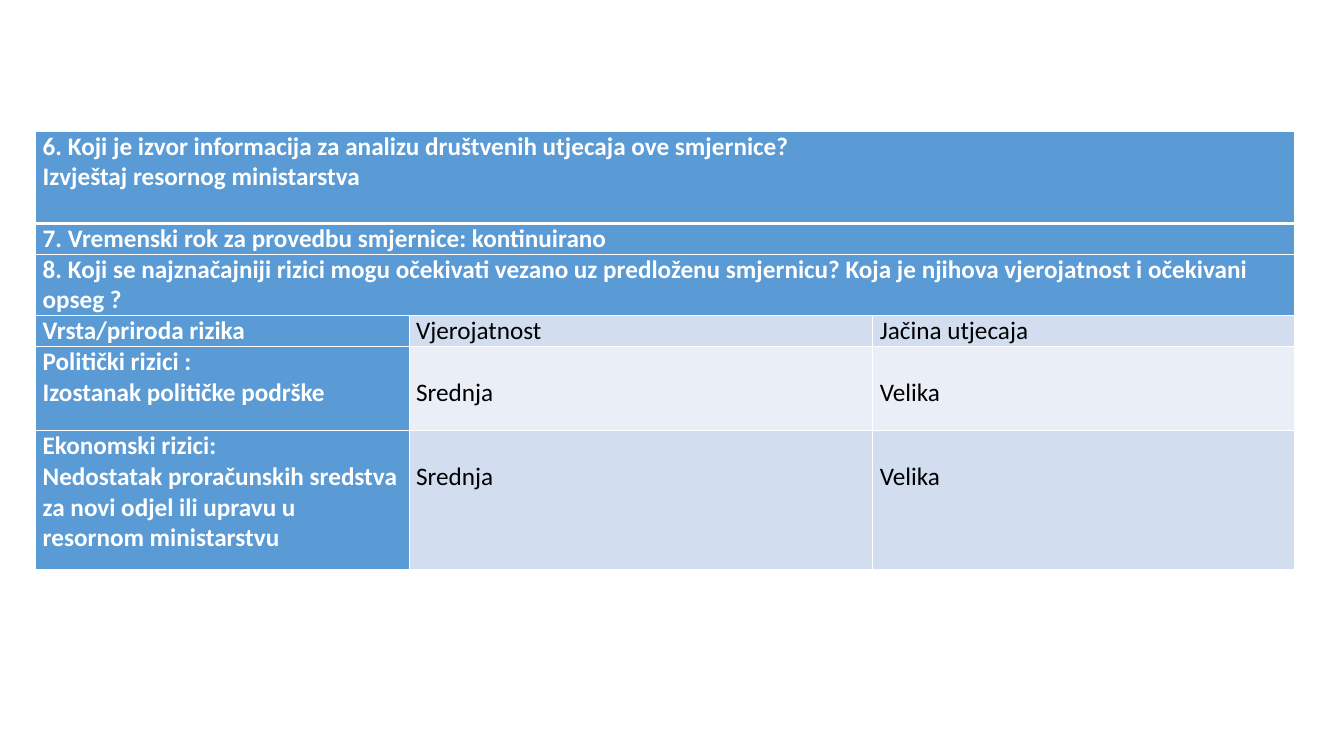
import pptx
import pptx.util
import pptx.dml.color
import pptx.oxml
import pptx.oxml.ns

Pt = pptx.util.Pt

COLORS = {"heading": "5B9BD5", "band": "D2DEEF", "light": "EAEFF7",
          "white": "FFFFFF", "black": "000000"}
QUESTIONS = [
    ["6. Koji je izvor informacija za analizu društvenih utjecaja ove smjernice?",
     "Izvještaj resornog ministarstva"],
    ["7. Vremenski rok za provedbu smjernice: kontinuirano"],
    ["8. Koji se najznačajniji rizici mogu očekivati vezano uz predloženu smjernicu? "
     "Koja je njihova vjerojatnost i očekivani opseg ?"],
]
RISKS = [
    (["Vrsta/priroda rizika"], "Vjerojatnost", "Jačina utjecaja"),
    (["Politički rizici :", "Izostanak političke podrške"], "Srednja", "Velika"),
    (["Ekonomski rizici:",
      "Nedostatak proračunskih sredstva za novi odjel ili upravu u resornom ministarstvu"],
     "Srednja", "Velika"),
]
LEFT, TOP = 25.5, 93.6
COLUMN_WIDTHS = [266.75, 331.25, 301]
ROW_HEIGHTS = [66, 22, 44, 22, 60, 99.5]
LINE_HEIGHT = 22
BORDER, HEADER_BORDER = 1, 3


def rgb(name):
    return pptx.dml.color.RGBColor.from_string(COLORS[name])


def add_borders(cell, row):
    properties = cell._tc.get_or_add_tcPr()
    widths = {"L": BORDER, "R": BORDER,
              "T": HEADER_BORDER if row == 1 else BORDER,
              "B": HEADER_BORDER if row == 0 else BORDER}
    for side, width in widths.items():
        properties.append(pptx.oxml.parse_xml(
            f'<a:ln{side} {pptx.oxml.ns.nsdecls("a")} w="{Pt(width)}">'
            f'<a:solidFill><a:srgbClr val="{COLORS["white"]}"/></a:solidFill></a:ln{side}>'))


def fill_cell(cell, lines, background, is_heading, top_margin=0):
    cell.margin_left = cell.margin_right = Pt(5)
    cell.margin_top, cell.margin_bottom = Pt(top_margin), Pt(0)
    cell.fill.solid()
    cell.fill.fore_color.rgb = rgb(background)
    cell.text_frame.text = "\n".join(lines)
    for paragraph in cell.text_frame.paragraphs:
        for run in paragraph.runs:
            run.font.name = "Calibri"
            run.font.size = Pt(18)
            run.font.bold = is_heading
            run.font.color.rgb = rgb("white" if is_heading else "black")


def main():
    deck = pptx.Presentation()
    deck.slide_width, deck.slide_height = Pt(960), Pt(540)
    slide = deck.slides.add_slide(deck.slide_layouts[6])
    risk_table = slide.shapes.add_table(
        len(ROW_HEIGHTS), len(COLUMN_WIDTHS), Pt(LEFT), Pt(TOP),
        Pt(sum(COLUMN_WIDTHS)), Pt(sum(ROW_HEIGHTS))).table
    for column, width in zip(risk_table.columns, COLUMN_WIDTHS):
        column.width = Pt(width)
    for row, height in enumerate(ROW_HEIGHTS):
        risk_table.rows[row].height = Pt(height)
        for cell in risk_table.rows[row].cells:
            add_borders(cell, row)

    for row, question in enumerate(QUESTIONS):
        for cell in risk_table.rows[row].cells:
            fill_cell(cell, [], "heading", True)
        first = risk_table.cell(row, 0)
        first.merge(risk_table.cell(row, len(COLUMN_WIDTHS) - 1))
        fill_cell(first, question, "heading", True)

    for index, (risk, *ratings) in enumerate(RISKS):
        row = len(QUESTIONS) + index
        fill_cell(risk_table.cell(row, 0), risk, "heading", True)
        background = "light" if index % 2 else "band"
        for column, rating in enumerate(ratings, 1):
            fill_cell(risk_table.cell(row, column), [rating], background, False,
                      LINE_HEIGHT * (len(risk) - 1))
    deck.save("out.pptx")


if __name__ == "__main__":
    main()
